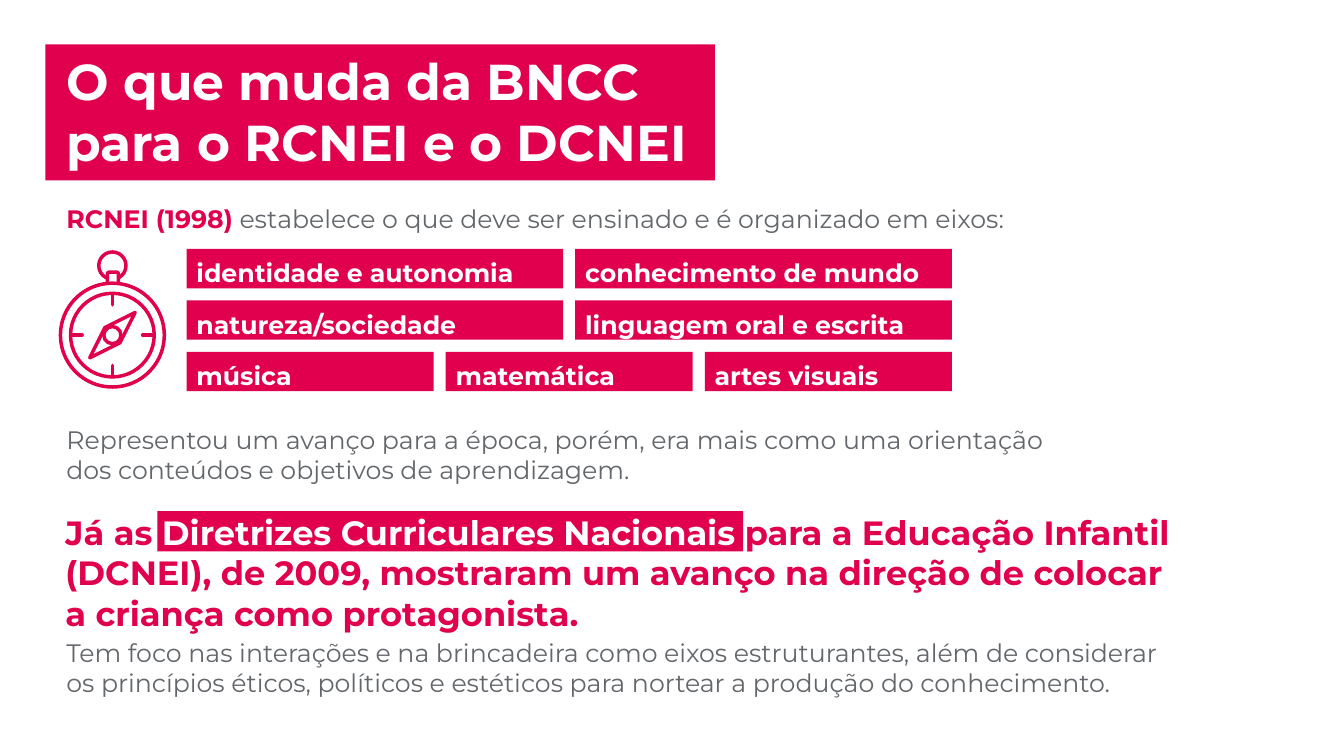
import pptx
import pptx.dml.color
import pptx.enum.shapes
import pptx.enum.text
import pptx.oxml
import pptx.util
from dataclasses import dataclass
from lxml import etree

SCALE = 9144
SHAPE = pptx.enum.shapes.MSO_SHAPE
ANCHOR = pptx.enum.text.MSO_ANCHOR


@dataclass(frozen=True)
class Theme:
    font: str = "Montserrat"
    red: str = "E0004D"
    gray: str = "63666A"
    white: str = "FFFFFF"
    title: int = 36
    lead: int = 24
    body: int = 18
    stroke: float = 2.5


T = Theme()


def px(n):
    return pptx.util.Emu(round(n * SCALE))


def rgb(color):
    return pptx.dml.color.RGBColor.from_string(color)


def write(p, text, size=T.body, color=T.gray, bold=False):
    r = p.add_run()
    r.text = text
    f = r.font
    f.name, f.size, f.bold = T.font, pptx.util.Pt(size), bold
    f.color.rgb = rgb(color)


def prepare(tf, anchor=ANCHOR.TOP, top=5, bottom=5, after=0):
    tf.word_wrap = True
    tf.auto_size = pptx.enum.text.MSO_AUTO_SIZE.NONE
    tf.vertical_anchor = anchor
    tf.margin_left = tf.margin_right = px(10)
    tf.margin_top, tf.margin_bottom = px(top), px(bottom)
    p = tf.paragraphs[0]
    p.alignment = pptx.enum.text.PP_ALIGN.LEFT
    p.space_before = pptx.util.Pt(0)
    p.space_after = pptx.util.Pt(after)
    return p


def textbox(shapes, x, y, w, h, after=0):
    sp = shapes.add_textbox(px(x), px(y), px(w), px(h))
    return prepare(sp.text_frame, after=after)


def bar(shapes, x, y, w, h):
    sp = shapes.add_shape(SHAPE.RECTANGLE, px(x), px(y), px(w), px(h))
    sp.shadow.inherit = False
    sp.fill.solid()
    sp.fill.fore_color.rgb = rgb(T.red)
    sp.line.fill.background()
    return sp


def outline(sp, fill=None):
    sp.shadow.inherit = False
    if fill:
        sp.fill.solid()
        sp.fill.fore_color.rgb = rgb(fill)
    else:
        sp.fill.background()
    sp.line.color.rgb = rgb(T.red)
    sp.line.width = pptx.util.Pt(T.stroke)


def title_banner(s, x, y, w, h):
    banner = bar(s.shapes, x, y, w, h)
    title = s.shapes.title
    title.left, title.top, title.width, title.height = px(x + 11), px(y + 1), px(w + 21), px(71)
    write(prepare(title.text_frame), "O que muda da BNCC para o RCNEI e o DCNEI",
          size=T.title, color=T.white, bold=True)
    banner.element.addnext(title.element)


def compass(s, x, y, w):
    shapes = s.shapes.add_group_shape().shapes
    cx, cy = x + w / 2, y + 85.5

    def ring(top, d, fill=None):
        outline(shapes.add_shape(SHAPE.OVAL, px(cx - d / 2), px(y + top), px(d), px(d)), fill)

    ring(3, 27)
    neck = shapes.add_shape(SHAPE.ROUNDED_RECTANGLE, px(cx - 5), px(y + 23), px(11), px(12))
    outline(neck, T.white)
    ring(34, 103, T.white)
    ring(44, 83)
    for dx, dy in ((0, -1), (1, 0), (0, 1), (-1, 0)):
        tick = shapes.add_connector(
            pptx.enum.shapes.MSO_CONNECTOR.STRAIGHT,
            px(cx + 30 * dx), px(cy + 30 * dy), px(cx + 41 * dx), px(cy + 41 * dy))
        tick.line.color.rgb = rgb(T.red)
        tick.line.width = pptx.util.Pt(T.stroke)
        etree.SubElement(tick.element.spPr, pptx.oxml.ns.qn("a:effectLst"))
        tick.line._get_or_add_ln().set("cap", "rnd")
    needle = shapes.build_freeform(round(x + 76), round(y + 63), scale=SCALE)
    needle.add_line_segments([(x + 46, y + 78), (x + 31, y + 108), (x + 61, y + 93)], close=True)
    outline(needle.convert_to_shape())
    ring(77, 17, T.white)


def axes_grid(s, x, y, w, h, gap=12):
    rows = (("identidade e autonomia", "conhecimento de mundo"),
            ("natureza/sociedade", "linguagem oral e escrita"),
            ("música", "matemática", "artes visuais"))
    row_h = (h - gap * (len(rows) - 1)) / len(rows)
    for i, labels in enumerate(rows):
        col_w = (w - gap * (len(labels) - 1)) / len(labels)
        for j, label in enumerate(labels):
            sp = bar(s.shapes, x + j * (col_w + gap), y + i * (row_h + gap), col_w, row_h)
            p = prepare(sp.text_frame, anchor=ANCHOR.MIDDLE, top=9, bottom=1)
            write(p, label, color=T.white, bold=True)


def rcnei(s, x, y, w):
    p = textbox(s.shapes, x, y, w, 49, after=6)
    write(p, "RCNEI (1998)", color=T.red, bold=True)
    write(p, " estabelece o que deve ser ensinado e é organizado em eixos:")
    compass(s, x + 2, y + 50, 107)
    axes_grid(s, x + 129, y + 50, 759, 141)
    p = textbox(s.shapes, x, y + 219, 1025, 79, after=6)
    write(p, "Representou um avanço para a época, porém, era mais como uma orientação "
             "dos conteúdos e objetivos de aprendizagem.")


def dcnei(s, x, y, w):
    bar(s.shapes, x + 101, y + 4, 581, 40)
    p = textbox(s.shapes, x, y, w, 131)
    for text, color in (
            ("Já as ", T.red),
            ("Diretrizes Curriculares Nacionais ", T.white),
            ("para a Educação Infantil (DCNEI), de 2009, mostraram um avanço na direção "
             "de colocar a criança como protagonista.", T.red)):
        write(p, text, size=T.lead, color=color, bold=True)
    p = textbox(s.shapes, x + 1, y + 124, w, 79, after=6)
    write(p, "Tem foco nas interações e na brincadeira como eixos estruturantes, além de "
             "considerar os princípios éticos, políticos e estéticos para nortear a "
             "produção do conhecimento.")


def main():
    prs = pptx.Presentation()
    prs.slide_width, prs.slide_height = px(1333), px(750)
    s = prs.slides.add_slide(prs.slide_layouts.get_by_name("Title Only"))
    title_banner(s, 45, 44, 664, 135)
    rcnei(s, 56, 197, 1167)
    dcnei(s, 55, 503, 1134)
    prs.save("out.pptx")


if __name__ == "__main__":
    main()
